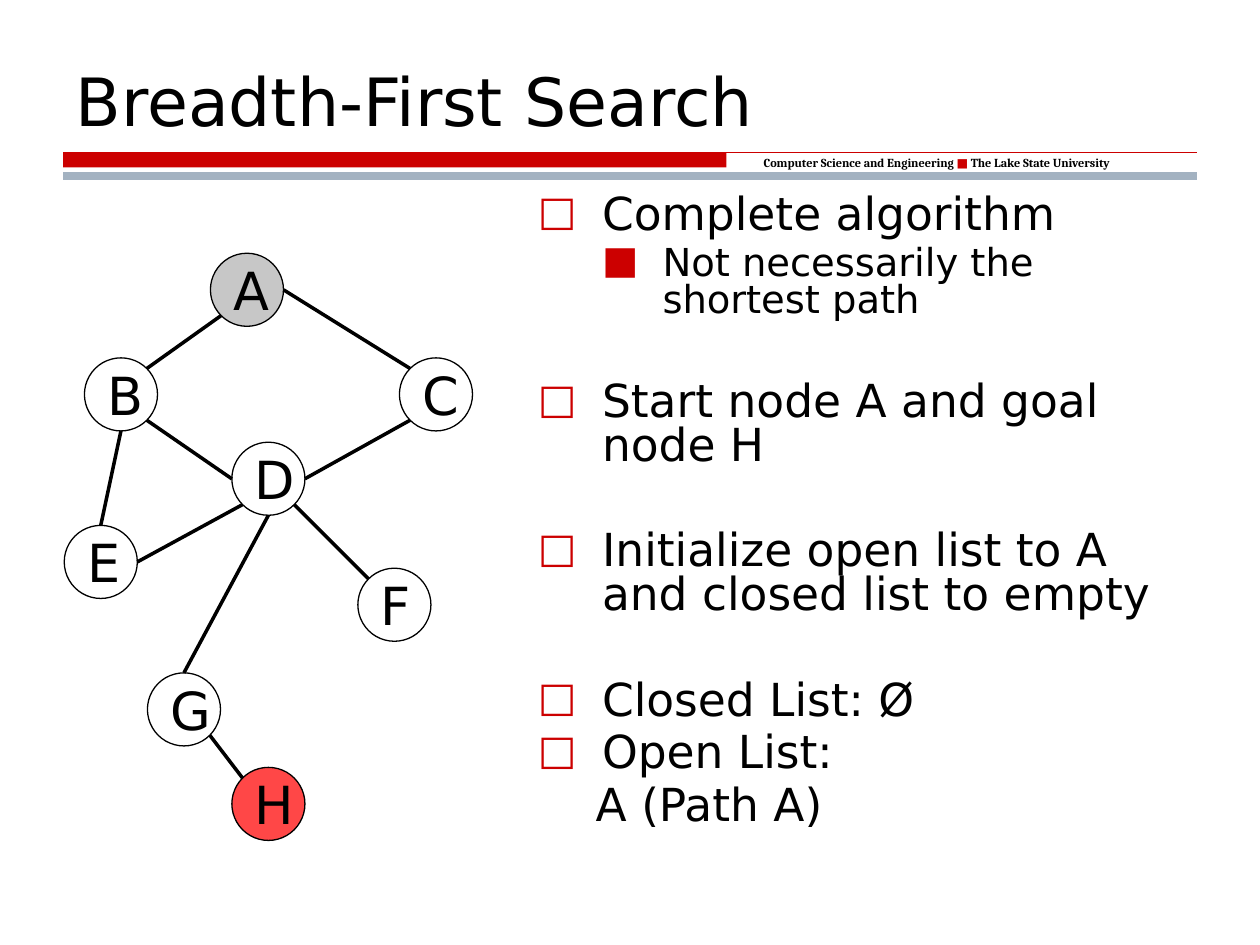
from math import cos, radians, sin

from lxml import etree
from pptx import Presentation
from pptx.dml.color import RGBColor
from pptx.enum.shapes import MSO_CONNECTOR, MSO_SHAPE
from pptx.enum.text import MSO_ANCHOR, PP_ALIGN
from pptx.oxml.ns import qn
from pptx.util import Inches, Pt

STRAIGHT = MSO_CONNECTOR.STRAIGHT
OVAL, RECTANGLE = MSO_SHAPE.OVAL, MSO_SHAPE.RECTANGLE
MIDDLE, BOTTOM = MSO_ANCHOR.MIDDLE, MSO_ANCHOR.BOTTOM
LEFT, CENTER = PP_ALIGN.LEFT, PP_ALIGN.CENTER

BLACK = RGBColor(0x00, 0x00, 0x00)
WHITE = RGBColor(0xFF, 0xFF, 0xFF)
RED = RGBColor(0xCC, 0x00, 0x00)
BLUE_GREY = RGBColor(0xA3, 0xB2, 0xC1)
START_GREY = RGBColor(0xC7, 0xC7, 0xC7)
GOAL_RED = RGBColor(0xFF, 0x47, 0x47)

SANS, SERIF = "DejaVu Sans", "Cambria"
TITLE_ONLY = 5
NODE_SIZE = 0.58

NODES = {
    "A": (1.46, 0.79, START_GREY),
    "B": (0.46, 1.62, None),
    "C": (2.96, 1.62, None),
    "D": (1.63, 2.29, WHITE),
    "E": (0.30, 2.95, WHITE),
    "F": (2.63, 3.29, WHITE),
    "G": (0.96, 4.12, WHITE),
    "H": (1.63, 4.87, GOAL_RED),
}

EDGES = [
    ("A", 135, "B", 315),
    ("A", 0, "C", 225),
    ("D", 180, "B", 45),
    ("D", 0, "C", 135),
    ("D", 45, "F", 225),
    ("E", 0, "D", 135),
    ("G", 270, "D", 90),
    ("E", 270, "B", 90),
    ("H", 225, "G", 45),
]

TIGHT, LOOSE = 5.3, 35.4
TOP_LEVEL = ("□", 26, 0.51, -0.51)
SUB_LEVEL = ("■", 22, 0.99, -0.48)
CONTINUED = (None, 26, 0.46, 0)
POINTS = [
    ("Complete algorithm", TOP_LEVEL, TIGHT),
    ("Not necessarily the shortest path", SUB_LEVEL, 4.5),
    ("Start node A and goal node H", TOP_LEVEL, LOOSE),
    ("Initialize open list to A and closed list to empty", TOP_LEVEL, LOOSE),
    ("Closed List: Ø", TOP_LEVEL, LOOSE),
    ("Open List:", TOP_LEVEL, TIGHT),
    ("A (Path A)", CONTINUED, TIGHT),
]


def style_font(font, size, color=BLACK, name=SANS, bold=False):
    font.size, font.name, font.bold = Pt(size), name, bold
    font.color.rgb = color


def add_line(slide, start, end, color, width):
    line = slide.shapes.add_connector(
        STRAIGHT, *(Inches(value) for value in (*start, *end)))
    line.line.color.rgb = color
    line.line.width = Pt(width)
    etree.SubElement(line._element.spPr, qn("a:effectLst"))


def add_title(slide, left, top, width, height):
    title = slide.shapes.title
    title.left, title.top = Inches(left), Inches(top)
    title.width, title.height = Inches(width), Inches(height)
    frame = title.text_frame
    frame.text = "Breadth-First Search"
    frame.vertical_anchor = BOTTOM
    frame.paragraphs[0].alignment = LEFT
    style_font(frame.paragraphs[0].font, 38)


def add_banner(slide, left, top, width, height):
    right, bar_height = left + width, height * 0.63
    bar = slide.shapes.add_shape(
        RECTANGLE, Inches(left), Inches(top),
        Inches(width * 0.585), Inches(bar_height))
    bar.shadow.inherit = False
    bar.fill.solid()
    bar.fill.fore_color.rgb = RED
    bar.line.fill.background()
    add_line(slide, (left, top), (right, top), RED, 0.75)
    add_line(slide, (left, top + height), (right, top + height), BLUE_GREY, 4.5)

    credit = slide.shapes.add_textbox(
        Inches(left + width * 0.607), Inches(top - 0.03),
        Inches(width * 0.379), Inches(0.22))
    credit.text_frame.word_wrap = True
    paragraph = credit.text_frame.paragraphs[0]
    for text, color, name, bold in (
        ("Computer Science and Engineering ", BLACK, SERIF, True),
        ("■", RED, SANS, False),
        (" The Lake State University", BLACK, SERIF, True),
    ):
        run = paragraph.add_run()
        run.text = text
        style_font(run.font, 7, color, name, bold)


def add_bullet(properties, mark):
    color = etree.SubElement(properties, qn("a:buClr"))
    etree.SubElement(color, qn("a:srgbClr"), val=str(RED))
    if mark == "□":
        etree.SubElement(properties, qn("a:buSzPct"), val="90000")
    etree.SubElement(properties, qn("a:buFont"), typeface=SANS)
    etree.SubElement(properties, qn("a:buChar"), char=mark)


def add_points(slide, left, top, width, height):
    body = slide.shapes.add_textbox(
        Inches(left), Inches(top), Inches(width), Inches(height))
    frame = body.text_frame
    frame.word_wrap = True
    for index, (text, (mark, size, margin, indent), gap) in enumerate(POINTS):
        paragraph = frame.add_paragraph() if index else frame.paragraphs[0]
        paragraph.text = text
        paragraph.level = 1 if mark == "■" else 0
        paragraph.line_spacing = 0.8
        paragraph.space_before = Pt(gap)
        style_font(paragraph.font, size)
        properties = paragraph._p.get_or_add_pPr()
        properties.set("marL", str(Inches(margin)))
        properties.set("indent", str(Inches(indent)))
        if mark:
            add_bullet(properties, mark)


def add_node(slide, left, top, label, color):
    node = slide.shapes.add_shape(
        OVAL, Inches(left), Inches(top), Inches(NODE_SIZE), Inches(NODE_SIZE))
    node.shadow.inherit = False
    if color is None:
        node.fill.background()
    else:
        node.fill.solid()
        node.fill.fore_color.rgb = color
    node.line.color.rgb = BLACK
    node.line.width = Pt(0.75)
    frame = node.text_frame
    frame.text = label
    frame.vertical_anchor = MIDDLE
    frame.paragraphs[0].alignment = CENTER
    style_font(frame.paragraphs[0].font, 30)


def add_graph(slide, left, top):
    def rim_point(label, angle):
        x, y, _ = NODES[label]
        radius = NODE_SIZE / 2
        return (left + x + radius * (1 + cos(radians(angle))),
                top + y + radius * (1 + sin(radians(angle))))

    for label, (x, y, color) in NODES.items():
        add_node(slide, left + x, top + y, label, color)
    for source, leaving, target, arriving in EDGES:
        add_line(slide, rim_point(source, leaving),
                 rim_point(target, arriving), BLACK, 2)


def main():
    deck = Presentation()
    deck.slide_width, deck.slide_height = Inches(10), Inches(7.5)
    slide = deck.slides.add_slide(deck.slide_layouts[TITLE_ONLY])
    add_banner(slide, 0.5, 1.21, 9, 0.19)
    add_title(slide, 0.5, 0.25, 9, 0.91)
    add_points(slide, 4.17, 1.5, 5.33, 5.75)
    add_graph(slide, 0.21, 1.22)
    deck.save("out.pptx")


if __name__ == "__main__":
    main()
